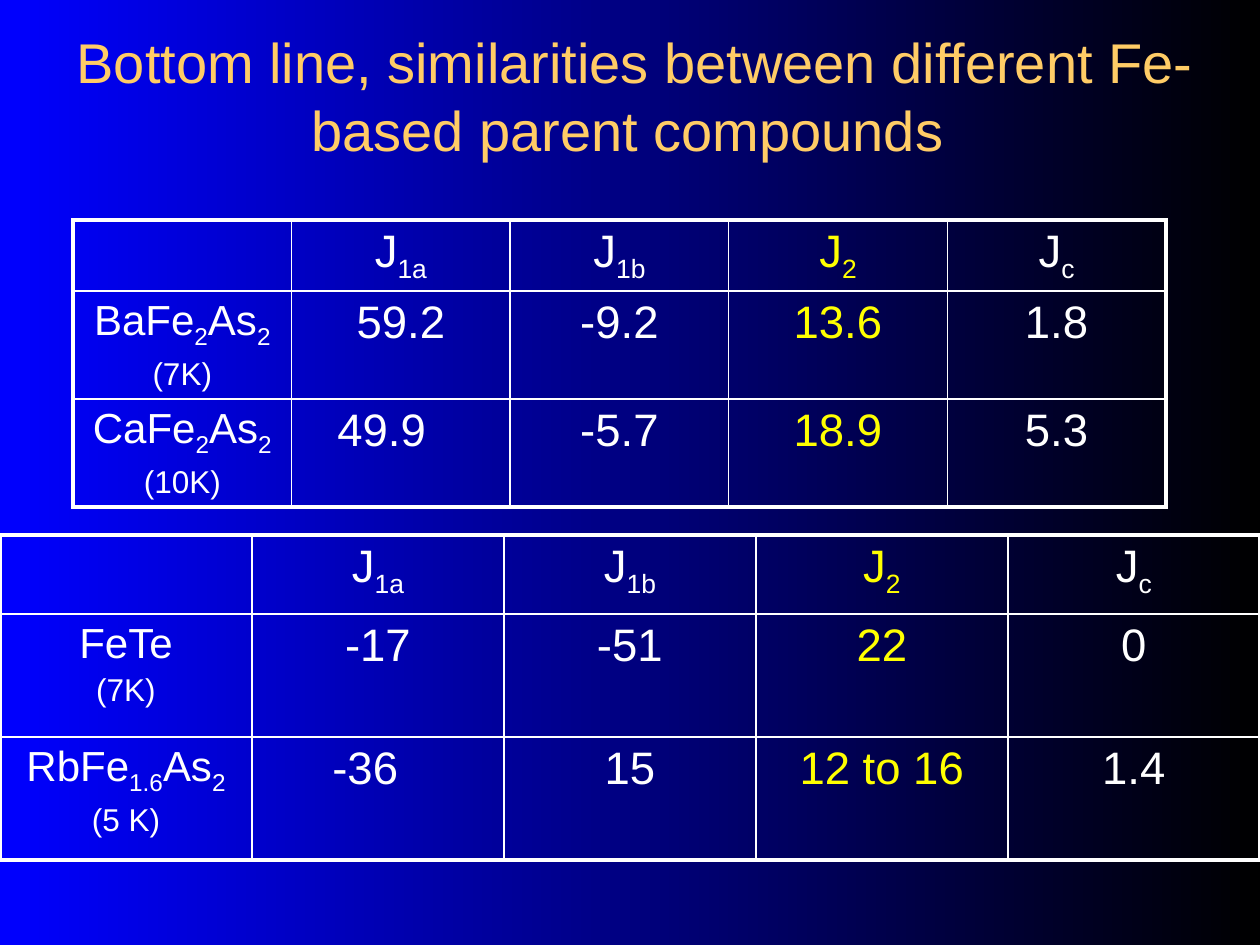
"""Build a slide comparing exchange couplings of Fe-based parent compounds."""
from dataclasses import dataclass

from lxml import etree
from pptx import Presentation
from pptx.dml.color import RGBColor
from pptx.enum.text import MSO_ANCHOR, MSO_AUTO_SIZE, PP_ALIGN
from pptx.oxml.ns import qn
from pptx.util import Emu, Pt

CENTER = PP_ALIGN.CENTER
MIDDLE = MSO_ANCHOR.MIDDLE
NO_AUTOFIT = MSO_AUTO_SIZE.NONE
EMU_PER_PX = 914400 // 126
TITLE_ONLY_LAYOUT = 5


@dataclass(frozen=True)
class Theme:
    font: str = "Arial"
    background: tuple = ("0000FF", "000000")
    title: str = "FFCC66"
    text: str = "FFFFFF"
    highlight: str = "FFFF00"
    line: str = "FFFFFF"
    title_size: int = 32
    value_size: int = 26
    compound_size: int = 24
    temperature_size: int = 18
    inner_line: float = 1
    outer_line: float = 2.25


THEME = Theme()
TITLE = "Bottom line, similarities between different Fe-based parent compounds "
TITLE_BOX = (32, 32, 1207, 126)
HEADINGS = [("J", "1a"), ("J", "1b"), ("J", "2"), ("J", "c")]
HIGHLIGHT_COLUMN = 3
CELL_MARGIN = 13

TABLES = [
    {
        "box": (73, 220, 1093, 287),
        "header_height": 71,
        "compounds": [
            (("BaFe", "2", "As", "2"), "(7K)", ("59.2", "-9.2", "13.6", "1.8")),
            (("CaFe", "2", "As", "2"), "(10K)", ("49.9", "-5.7", "18.9", "5.3")),
        ],
        "extra_right_margin": {(2, 1): 38},
    },
    {
        "box": (0, 535, 1260, 325),
        "header_height": 79,
        "compounds": [
            (("FeTe",), "(7K)", ("-17", "-51", "22", "0")),
            (("RbFe", "1.6", "As", "2"), "(5 K)", ("-36", "15", "12 to 16", "1.4")),
        ],
        "extra_right_margin": {(2, 1): 25},
    },
]


def px(value):
    return Emu(round(value * EMU_PER_PX))


def write_runs(paragraph, parts, size, color):
    """Write parts centred, with every second part as a subscript."""
    paragraph.alignment = CENTER
    for index, part in enumerate(parts):
        run = paragraph.add_run()
        run.text = part
        run.font.name = THEME.font
        run.font.size = Pt(size)
        run.font.color.rgb = RGBColor.from_string(color)
        if index % 2:
            run.font._element.set("baseline", "-25000")


def set_borders(cell, outer_sides):
    """Draw all four borders, thicker on the outer sides."""
    properties = cell._tc.get_or_add_tcPr()
    for side in "LRTB":
        width = THEME.outer_line if side in outer_sides else THEME.inner_line
        line = etree.SubElement(properties, qn(f"a:ln{side}"), w=str(Pt(width)))
        fill = etree.SubElement(line, qn("a:solidFill"))
        etree.SubElement(fill, qn("a:srgbClr"), val=THEME.line)


def add_title(slide):
    """Place and format the title placeholder."""
    title = slide.shapes.title
    title.left, title.top, title.width, title.height = map(px, TITLE_BOX)
    frame = title.text_frame
    frame.auto_size = NO_AUTOFIT
    frame.vertical_anchor = MIDDLE
    frame.word_wrap = True
    write_runs(frame.paragraphs[0], (TITLE,), THEME.title_size, THEME.title)


def add_coupling_table(slide, data):
    """Add one table of couplings with a compound in each row."""
    left, top, width, height = data["box"]
    compounds = data["compounds"]
    row_count, column_count = len(compounds) + 1, len(HEADINGS) + 1
    table = slide.shapes.add_table(row_count, column_count, *map(px, data["box"])).table
    table.first_row = table.horz_banding = False
    for column in table.columns:
        column.width = px(width / column_count)
    for row in table.rows:
        row.height = px((height - data["header_height"]) / len(compounds))
    table.rows[0].height = px(data["header_height"])

    grid = [HEADINGS] + [[(value,) for value in values] for _, _, values in compounds]
    for row, entries in enumerate(grid):
        for column, parts in enumerate(entries, start=1):
            color = THEME.highlight if column == HIGHLIGHT_COLUMN else THEME.text
            paragraph = table.cell(row, column).text_frame.paragraphs[0]
            write_runs(paragraph, parts, THEME.value_size, color)

    for row, (formula, temperature, _) in enumerate(compounds, start=1):
        frame = table.cell(row, 0).text_frame
        write_runs(frame.paragraphs[0], formula, THEME.compound_size, THEME.text)
        paragraph = frame.add_paragraph()
        paragraph.space_before = Pt(THEME.temperature_size * 0.2)
        write_runs(paragraph, (temperature,), THEME.temperature_size, THEME.text)

    for row in range(row_count):
        for column in range(column_count):
            edges = {"L": column == 0, "R": column == column_count - 1,
                     "T": row == 0, "B": row == row_count - 1}
            cell = table.cell(row, column)
            set_borders(cell, [side for side, outer in edges.items() if outer])
            cell.fill.background()
    for position, extra in data["extra_right_margin"].items():
        table.cell(*position).margin_right = px(CELL_MARGIN + extra)


def main():
    presentation = Presentation()
    presentation.slide_width, presentation.slide_height = px(1260), px(945)
    slide = presentation.slides.add_slide(presentation.slide_layouts[TITLE_ONLY_LAYOUT])
    fill = slide.background.fill
    fill.gradient()
    fill.gradient_angle = 0
    for stop, position, color in zip(fill.gradient_stops, (0, 1), THEME.background):
        stop.position = position
        stop.color.rgb = RGBColor.from_string(color)
    for data in TABLES:
        add_coupling_table(slide, data)
    add_title(slide)
    presentation.save("out.pptx")


if __name__ == "__main__":
    main()
